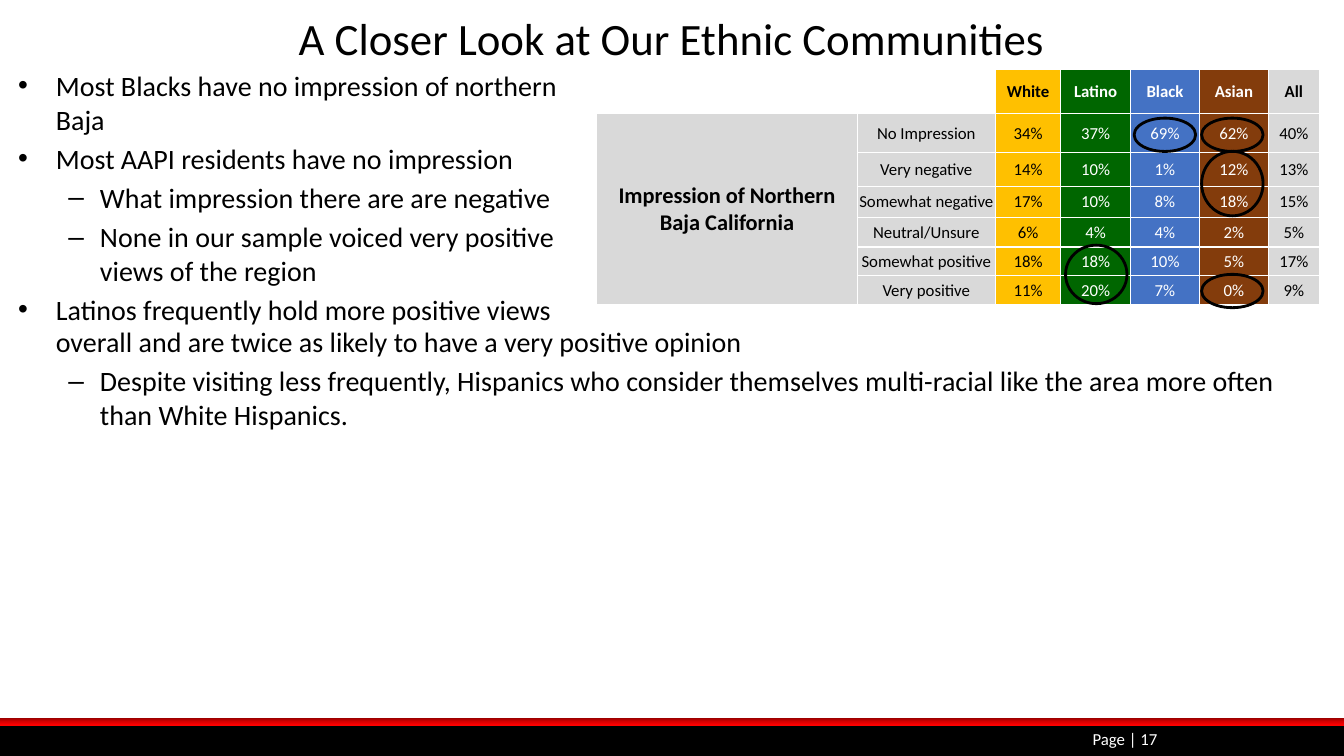
import copy
import dataclasses

import pptx
import pptx.dml.color
import pptx.enum.shapes
import pptx.enum.text
import pptx.oxml
import pptx.oxml.ns
import pptx.util

Pt = pptx.util.Pt
Shape = pptx.enum.shapes.MSO_SHAPE
Align = pptx.enum.text.PP_ALIGN
Anchor = pptx.enum.text.MSO_ANCHOR


@dataclasses.dataclass(frozen=True)
class Theme:
    font: str = "Calibri"
    black: str = "000000"
    white: str = "FFFFFF"
    grey: str = "D9D9D9"
    gold: str = "FFC000"
    green: str = "006600"
    blue: str = "4472C4"
    brown: str = "833C0C"
    stripe: tuple = ((0, "970000"), (0.5, "D70000"), (1, "FF0000"))
    title: int = 32
    body: int = 20
    label: int = 16
    small: int = 12


THEME = Theme()
PAGE_WIDTH, PAGE_HEIGHT = 960, 540

# Level: left indent, hanging indent, bullet
LEVELS = {0: (27, -27, "•"), 1: (58.5, -22.5, "–")}

LEFT_POINTS = [
    ("Most Blacks have no impression of northern Baja", 0),
    ("Most AAPI residents have no impression", 0),
    ("What impression there are are negative", 1),
    ("None in our sample voiced very positive views of the region", 1),
    ("Latinos frequently hold more positive views", 0),
]
WIDE_POINTS = [
    ("overall and are twice as likely to have a very positive opinion", None),
    ("Despite visiting less frequently, Hispanics who consider themselves "
     "multi-racial like the area more often than White Hispanics.", 1),
]

# Group name, column fill, text colour
GROUPS = [
    ("White", THEME.gold, THEME.black),
    ("Latino", THEME.green, THEME.white),
    ("Black", THEME.blue, THEME.white),
    ("Asian", THEME.brown, THEME.white),
    ("All", THEME.grey, THEME.black),
]
IMPRESSIONS = [
    ("No Impression", 34, 37, 69, 62, 40),
    ("Very negative", 14, 10, 1, 12, 13),
    ("Somewhat negative", 17, 10, 8, 18, 15),
    ("Neutral/Unsure", 6, 4, 4, 2, 5),
    ("Somewhat positive", 18, 18, 10, 5, 17),
    ("Very positive", 11, 20, 7, 0, 9),
]
COLUMN_WIDTHS = [186.1, 98.6, 46.8, 49.6, 49.6, 48.9, 36.8]
ROW_HEIGHTS = [31.4, 27.5, 24.3, 22.3, 21.2, 20.5, 20.5]

# Left and top from the table corner, height
HIGHLIGHTS = [
    (432, 34.6, 23.8),
    (383.8, 34.6, 23.8),
    (432, 146.2, 23.8),
    (334.8, 125.3, 41.8),
    (432, 58.3, 46.1),
]
HIGHLIGHT_WIDTH = 43.9


def rgb(colour):
    return pptx.dml.color.RGBColor.from_string(colour)


def points(box):
    return [Pt(length) for length in box]


def write(para, text, size=THEME.small, colour=THEME.black, bold=False, align=Align.LEFT):
    para.alignment = align
    span = para.add_run()
    span.text = text
    span.font.name, span.font.size, span.font.bold = THEME.font, Pt(size), bold
    span.font.color.rgb = rgb(colour)


def add_shape(page, kind, box):
    shape = page.shapes.add_shape(kind, *points(box))
    shape.shadow.inherit = False
    return shape


def add_title(page, box, text):
    title = page.shapes.title
    title.left, title.top, title.width, title.height = points(box)
    title.text_frame.vertical_anchor = Anchor.MIDDLE
    write(title.text_frame.paragraphs[0], text, size=THEME.title, align=Align.CENTER)


def add_points(page, box, items):
    frame = page.shapes.add_textbox(*points(box)).text_frame
    frame.word_wrap = True
    for index, (text, level) in enumerate(items):
        para = frame.add_paragraph() if index else frame.paragraphs[0]
        para.space_before = Pt(4)
        write(para, text, size=THEME.body)
        # A point without a level continues the text of the one above
        left, hanging, bullet = LEVELS[level] if level is not None else (27, 0, None)
        para.level = level or 0
        properties = para._p.get_or_add_pPr()
        properties.set("marL", str(Pt(left)))
        properties.set("indent", str(Pt(hanging)))
        if bullet:
            namespace = pptx.oxml.ns.nsdecls("a")
            for tag in (f'<a:buFont {namespace} typeface="Arial"/>',
                        f'<a:buChar {namespace} char="{bullet}"/>'):
                properties.append(pptx.oxml.parse_xml(tag))


def style_cell(cell, fill, border=1):
    cell.vertical_anchor = Anchor.MIDDLE
    cell.margin_left = cell.margin_right = cell.margin_top = Pt(0.72)
    cell.margin_bottom = Pt(0)
    if fill:
        cell.fill.solid()
        cell.fill.fore_color.rgb = rgb(fill)
    else:
        cell.fill.background()
    properties = cell._tc.get_or_add_tcPr()
    for index, side in enumerate("LRTB"):
        properties.insert(index, pptx.oxml.parse_xml(
            f'<a:ln{side} {pptx.oxml.ns.nsdecls("a")} w="{Pt(border)}"><a:solidFill>'
            f'<a:srgbClr val="{THEME.white}"/></a:solidFill></a:ln{side}>'))


def add_impressions(page, left, top):
    box = (left, top, sum(COLUMN_WIDTHS), sum(ROW_HEIGHTS))
    table = page.shapes.add_table(len(ROW_HEIGHTS), len(COLUMN_WIDTHS), *points(box)).table
    for column, width in zip(table.columns, COLUMN_WIDTHS):
        column.width = Pt(width)
    for row, height in zip(table.rows, ROW_HEIGHTS):
        row.height = Pt(height)

    def fill_cell(row, column, text, fill, **text_format):
        cell = table.cell(row, column)
        style_cell(cell, fill)
        write(cell.text_frame.paragraphs[0], text, align=Align.CENTER, **text_format)

    # Empty corner and row heading
    table.cell(0, 0).merge(table.cell(0, 1))
    table.cell(1, 0).merge(table.cell(len(IMPRESSIONS), 0))
    for column in (0, 1):
        style_cell(table.cell(0, column), None, border=0.5)
    for row in range(2, len(ROW_HEIGHTS)):
        style_cell(table.cell(row, 0), THEME.grey)
    fill_cell(1, 0, "Impression of Northern Baja California", THEME.grey,
              size=THEME.label, bold=True)

    # Group headings and shares
    for column, (name, fill, colour) in enumerate(GROUPS, 2):
        fill_cell(0, column, name, fill, colour=colour, bold=True)
    for row, (impression, *shares) in enumerate(IMPRESSIONS, 1):
        fill_cell(row, 1, impression, THEME.grey)
        for column, (share, group) in enumerate(zip(shares, GROUPS), 2):
            fill_cell(row, column, f"{share}%", group[1], colour=group[2])

    # Rings around the notable shares
    for across, down, height in HIGHLIGHTS:
        ring = add_shape(page, Shape.OVAL, (left + across, top + down, HIGHLIGHT_WIDTH, height))
        ring.fill.background()
        ring.line.color.rgb = rgb(THEME.black)
        ring.line.width = Pt(2)


def add_footer(page, left, top, width, height):
    band = add_shape(page, Shape.RECTANGLE, (left, top, width, height))
    band.fill.solid()
    band.fill.fore_color.rgb = rgb(THEME.black)
    band.line.fill.background()

    # Red stripe along the top of the band
    stripe = add_shape(page, Shape.RECTANGLE, (left, top - 4.7, width, 5))
    stripe.line.fill.background()
    stripe.fill.gradient()
    stripe.fill.gradient_angle = 270
    stops = stripe.element.spPr.find(".//" + pptx.oxml.ns.qn("a:gsLst"))
    stops.insert(1, copy.deepcopy(stops[0]))
    for stop, (position, colour) in zip(stripe.fill.gradient_stops, THEME.stripe):
        stop.position = position
        stop.color.rgb = rgb(colour)

    # Page number
    number = page.shapes.add_textbox(*points((left + 666, top + 0.7, 167.8, 18))).text_frame
    number.word_wrap = True
    number.vertical_anchor = Anchor.MIDDLE
    write(number.paragraphs[0], "Page | 17", colour=THEME.white, align=Align.RIGHT)


def main():
    deck = pptx.Presentation()
    deck.slide_width, deck.slide_height = Pt(PAGE_WIDTH), Pt(PAGE_HEIGHT)
    page = deck.slides.add_slide(deck.slide_layouts.get_by_name("Title Only"))
    add_footer(page, 0, 517.7, PAGE_WIDTH, 22.3)
    add_title(page, (5.8, 3.6, 948, 46), "A Closer Look at Our Ethnic Communities")
    add_points(page, (5.8, 45.4, 409, 111), LEFT_POINTS)
    add_points(page, (5.8, 228.2, 930, 111), WIDE_POINTS)
    add_impressions(page, 426.3, 49.8)
    deck.save("out.pptx")


if __name__ == "__main__":
    main()
